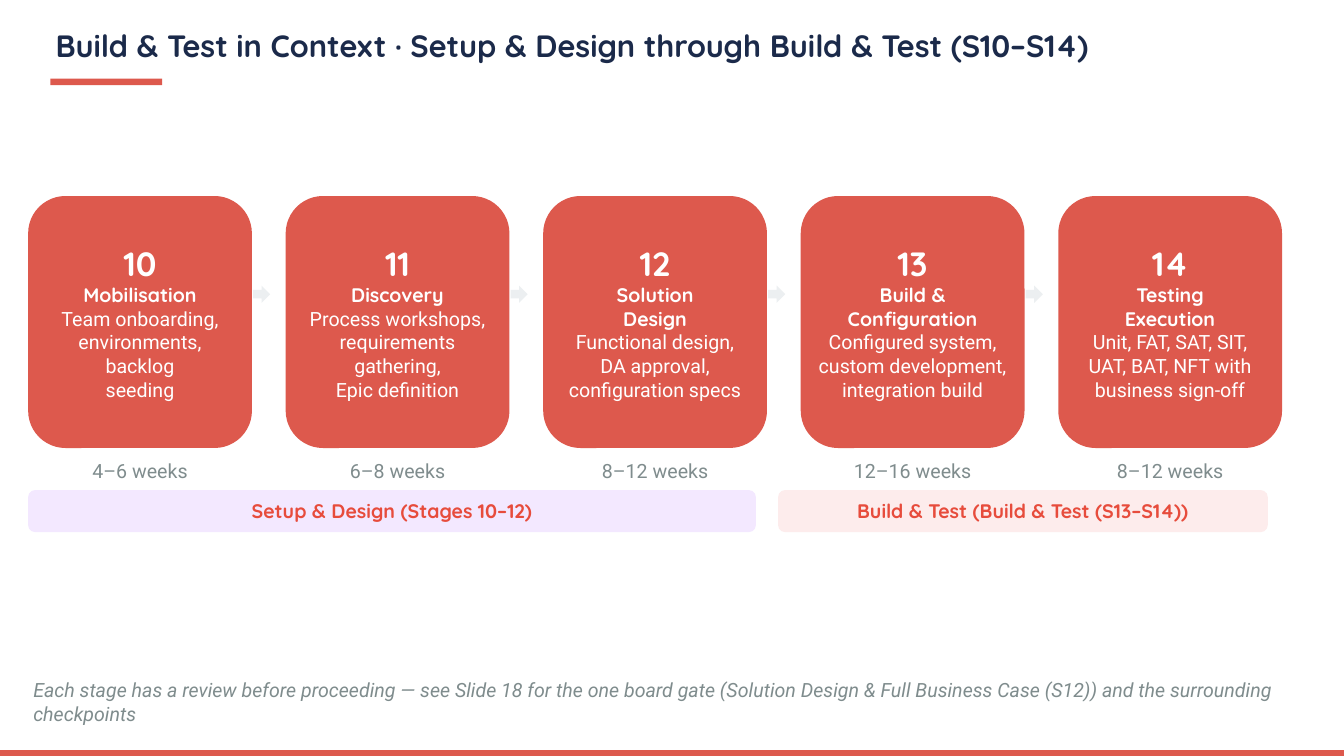
from pptx import Presentation
from pptx.dml.color import RGBColor
from pptx.enum.shapes import MSO_SHAPE as Preset
from pptx.enum.text import MSO_ANCHOR as Anchor, PP_ALIGN as Align
from pptx.util import Cm, Pt

hex_color = RGBColor.from_string
CORAL, NAVY, GREY, WHITE, RED = "DD594D", "1B2A4A", "7F8C8D", "FFFFFF", "E74C3C"
HEADING, BODY = "Quicksand", "Roboto"

deck = Presentation()
deck.slide_width, deck.slide_height = Cm(33.87), Cm(19.05)
slide = deck.slides.add_slide(deck.slide_layouts[6])


def add_block(preset, left, top, width, height, fill):
    block = slide.shapes.add_shape(preset, Cm(left), Cm(top), Cm(width), Cm(height))
    block.shadow.inherit = False
    block.fill.solid()
    block.fill.fore_color.rgb = hex_color(fill)
    block.line.fill.background()
    return block


def write(shape, lines, color, align=Align.CENTER, italic=False):
    frame = shape.text_frame
    frame.word_wrap = True
    frame.vertical_anchor = Anchor.MIDDLE
    frame.margin_left = frame.margin_right = Cm(0.13)
    frame.margin_top = frame.margin_bottom = Cm(0.13)
    for index, (text, size, face, bold) in enumerate(lines):
        paragraph = frame.add_paragraph() if index else frame.paragraphs[0]
        paragraph.text = text
        paragraph.alignment = align
        font = paragraph.font
        font.size, font.name, font.bold, font.italic = Pt(size), face, bold, italic
        font.color.rgb = hex_color(color)


title = slide.shapes.add_textbox(Cm(1.27), Cm(0.42), Cm(31.33), Cm(1.42))
write(title, [("Build & Test in Context · Setup & Design through Build & Test (S10–S14)",
               22, HEADING, True)], NAVY, Align.LEFT)

stages = [
    ("Mobilisation", "Team onboarding,\nenvironments, backlog\nseeding", "4–6 weeks"),
    ("Discovery", "Process workshops,\nrequirements gathering,\nEpic definition", "6–8 weeks"),
    ("Solution\nDesign", "Functional design,\nDA approval,\nconfiguration specs", "8–12 weeks"),
    ("Build &\nConfiguration", "Configured system,\ncustom development,\nintegration build",
     "12–16 weeks"),
    ("Testing\nExecution", "Unit, FAT, SAT, SIT,\nUAT, BAT, NFT with\nbusiness sign-off",
     "8–12 weeks"),
]
margin, stage_width, pitch = 0.71, 5.64, 6.49

for index, (name, activities, weeks) in enumerate(stages):
    left = margin + index * pitch
    stage = add_block(Preset.ROUNDED_RECTANGLE, left, 4.94, stage_width, 6.35, CORAL)
    write(stage, [(str(10 + index), 24, HEADING, True),
                  (name, 14, HEADING, True),
                  (activities, 14, BODY, False)], WHITE)
    duration = slide.shapes.add_textbox(Cm(left), Cm(11.46), Cm(stage_width), Cm(0.79))
    write(duration, [(weeks, 14, BODY, False)], GREY)
    if index < len(stages) - 1:
        add_block(Preset.RIGHT_ARROW, left + stage_width + 0.03, 7.2, 0.43, 0.43, "ECEFF1")

phases = [
    ("Setup & Design (Stages 10–12)", margin, 18.34, "F3E8FF"),
    ("Build & Test (Build & Test (S13–S14))", 19.61, 12.34, "FDECEC"),
]
for name, left, width, tint in phases:
    phase = add_block(Preset.ROUNDED_RECTANGLE, left, 12.35, width, 1.06, tint)
    write(phase, [(name, 14, HEADING, True)], RED)

review_note = slide.shapes.add_textbox(Cm(margin), Cm(17.29), Cm(31.75), Cm(0.79))
write(review_note, [("Each stage has a review before proceeding — see Slide 18 for the one board "
                     "gate (Solution Design & Full Business Case (S12)) and the surrounding "
                     "checkpoints", 14, BODY, False)], GREY, Align.LEFT, italic=True)

add_block(Preset.RECTANGLE, 0, 18.9, 33.87, 0.15, CORAL)
add_block(Preset.RECTANGLE, 1.27, 1.98, 2.82, 0.17, CORAL)

deck.save("out.pptx")
